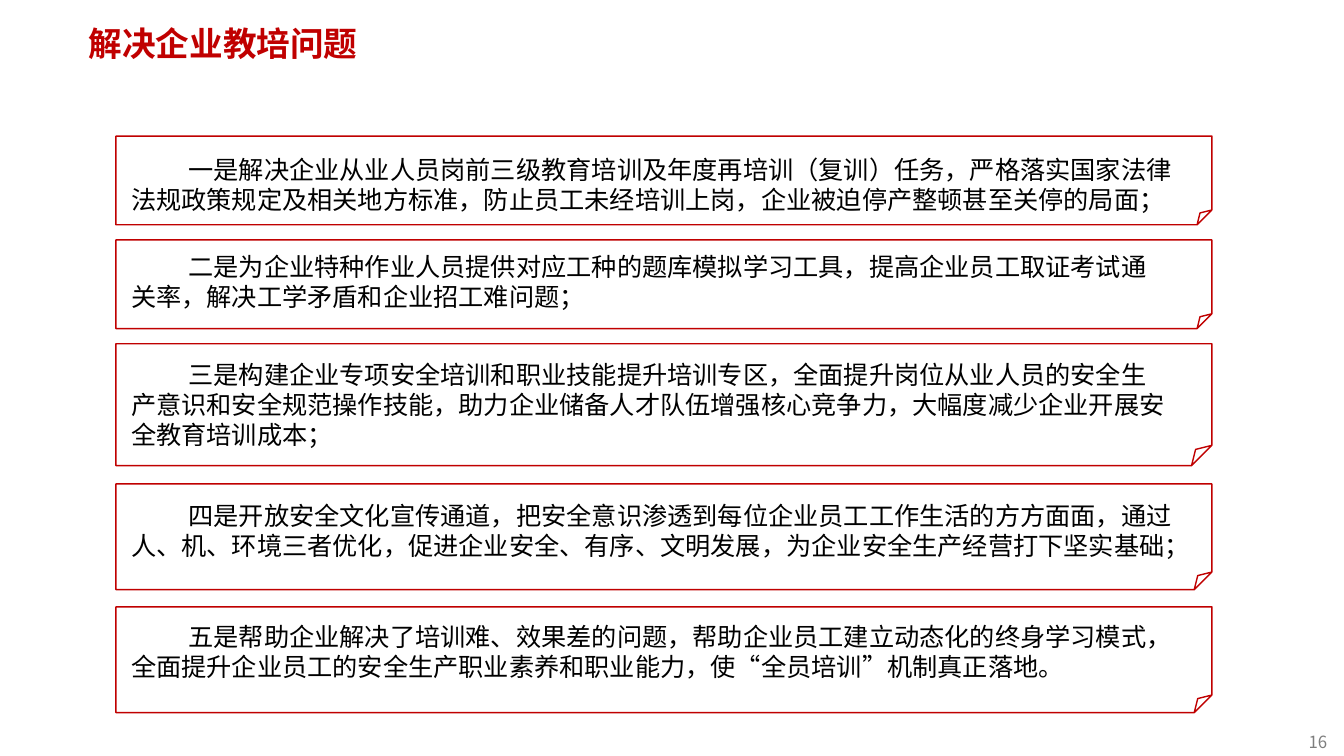
from lxml.etree import SubElement
from pptx import Presentation
from pptx.dml.color import RGBColor
from pptx.enum.shapes import MSO_SHAPE
from pptx.enum.text import MSO_ANCHOR, PP_ALIGN
from pptx.oxml.ns import qn
from pptx.util import Inches, Pt

COLORS = {"red": "C00000", "text": "000000", "number": "7E7E7E"}
FONT = "Noto Sans CJK SC"
NOTE_LEFT, NOTE_WIDTH = 1.15, 10.87

# Top, height, space above the text, text
NOTES = [
    (1.35, 0.88, 0.18,
     "一是解决企业从业人员岗前三级教育培训及年度再培训（复训）任务，严格落实国家法律\v"
     "法规政策规定及相关地方标准，防止员工未经培训上岗，企业被迫停产整顿甚至关停的局面；"),
    (2.38, 0.88, 0.11,
     "二是为企业特种作业人员提供对应工种的题库模拟学习工具，提高企业员工取证考试通\v"
     "关率，解决工学矛盾和企业招工难问题；"),
    (3.41, 1.21, 0.15,
     "三是构建企业专项安全培训和职业技能提升培训专区，全面提升岗位从业人员的安全生\v"
     "产意识和安全规范操作技能，助力企业储备人才队伍增强核心竞争力，大幅度减少企业开展安\v"
     "全教育培训成本；"),
    (4.8, 1.05, 0.16,
     "四是开放安全文化宣传通道，把安全意识渗透到每位企业员工工作生活的方方面面，通过\v"
     "人、机、环境三者优化，促进企业安全、有序、文明发展，为企业安全生产经营打下坚实基础；"),
    (6.02, 1.05, 0.14,
     "五是帮助企业解决了培训难、效果差的问题，帮助企业员工建立动态化的终身学习模式，\v"
     "全面提升企业员工的安全生产职业素养和职业能力，使“全员培训”机制真正落地。"),
]


def write_text(box, text, size, color, bold=False, anchor=MSO_ANCHOR.MIDDLE,
               left=0, top=0, right=0, indent=0, line_spacing=None):
    frame = box.text_frame
    frame.word_wrap = True
    frame.vertical_anchor = anchor
    frame.margin_left, frame.margin_top = Inches(left), Inches(top)
    frame.margin_right, frame.margin_bottom = Inches(right), 0
    para = frame.paragraphs[0]
    para.text = text
    para.alignment = PP_ALIGN.LEFT
    para.line_spacing = line_spacing
    if indent:
        para._p.get_or_add_pPr().set("indent", str(Inches(indent)))
    for span in para.runs:
        span.font.name = FONT
        span.font.size = Pt(size)
        span.font.bold = bold
        span.font.color.rgb = RGBColor.from_string(COLORS[color])
        SubElement(span.font._element, qn("a:ea"), typeface=FONT)


deck = Presentation()
deck.slide_width, deck.slide_height = Inches(13.33), Inches(7.5)
page = deck.slides.add_slide(deck.slide_layouts[5])

# Title
title = page.shapes.title
title.left, title.top = Inches(0.88), Inches(0.21)
title.width, title.height = Inches(2.8), Inches(0.43)
write_text(title, "解决企业教培问题", 24, "red", bold=True)

# Notes with a folded corner
for top, height, space_above, text in NOTES:
    note = page.shapes.add_shape(MSO_SHAPE.FOLDED_CORNER, Inches(NOTE_LEFT), Inches(top),
                                 Inches(NOTE_WIDTH), Inches(height))
    note.shadow.inherit = False
    note.fill.background()
    note.line.color.rgb = RGBColor.from_string(COLORS["red"])
    note.line.width = Pt(1)
    write_text(note, text, 18, "text", anchor=MSO_ANCHOR.TOP, left=0.15, top=space_above,
               right=0.05, indent=0.57, line_spacing=Pt(21.6))

# Page number
number = page.shapes.add_textbox(Inches(12.98), Inches(7.23), Inches(0.28), Inches(0.25))
write_text(number, "16", 12, "number")

deck.save("out.pptx")
